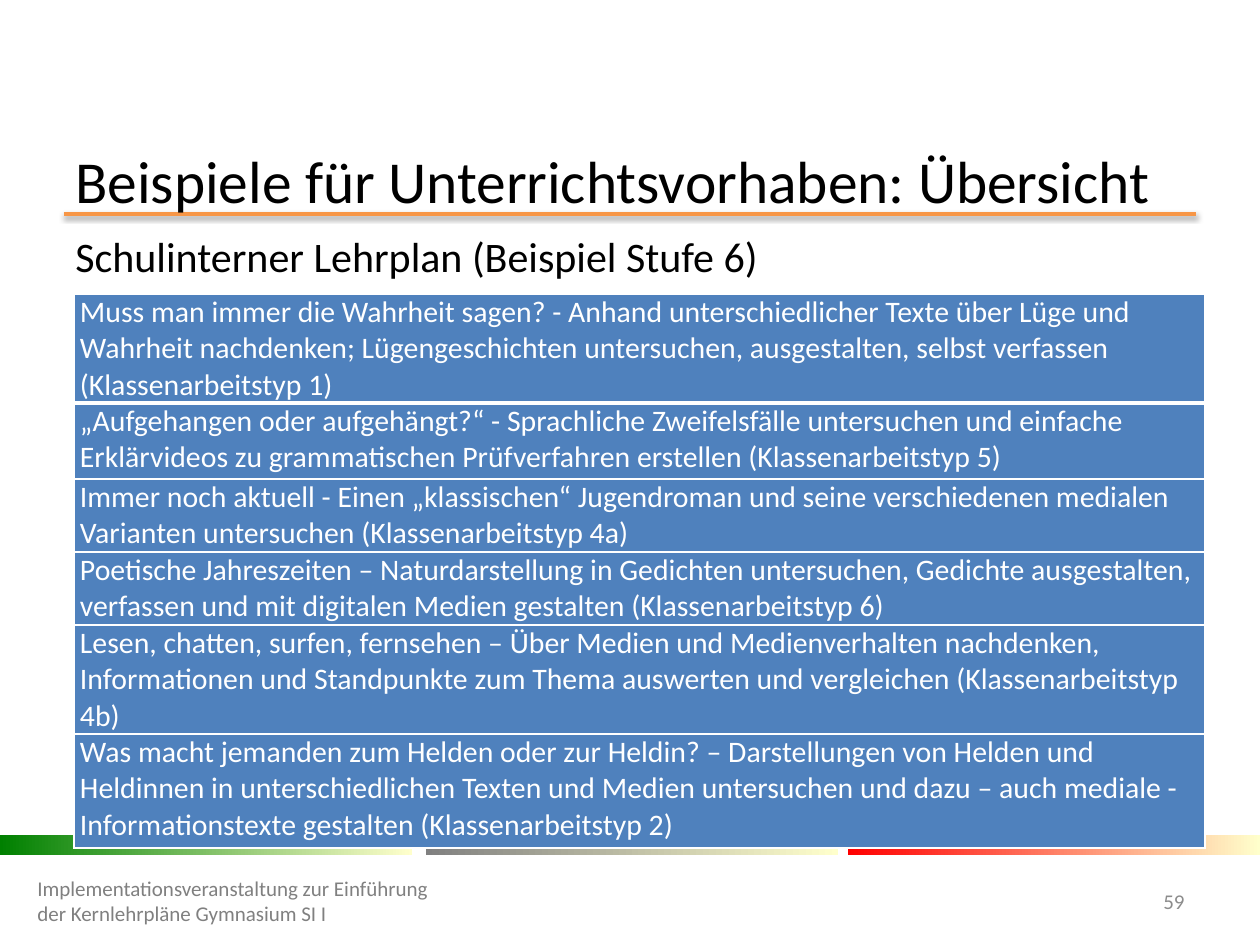
import pptx
import pptx.dml.color
import pptx.enum.shapes
import pptx.enum.text
import pptx.oxml
import pptx.oxml.ns
import pptx.util

COLORS = {
    "white": "FFFFFF", "black": "000000", "orange": "F79646", "blue": "4F81BD",
    "green": "008000", "gray": "808080", "red": "FF0000", "cream": "FFFFCC",
    "number": "8C8C8C",
}
FONT = "Calibri"
NS = pptx.oxml.ns.nsdecls("a")
ANCHOR = pptx.enum.text.MSO_ANCHOR
ALIGN = pptx.enum.text.PP_ALIGN


def px(n):
    return pptx.util.Emu(round(n * 914400 / 126))


def rgb(name):
    return pptx.dml.color.RGBColor.from_string(COLORS[name])


class SlideBuilder:
    def __init__(self, slide):
        self.slide = slide

    def set_text(self, tf, text, size, color, align=ALIGN.LEFT, before=0, after=0):
        tf.text = text
        p = tf.paragraphs[0]
        p.alignment = align
        p.space_before = pptx.util.Pt(before)
        p.space_after = pptx.util.Pt(after)
        for r in p.runs:
            r.font.name = FONT
            r.font.size = pptx.util.Pt(size)
            r.font.color.rgb = rgb(color)

    def text(self, x, y, w, h, text, size, color, anchor=ANCHOR.MIDDLE, fill=None, **style):
        sp = self.slide.shapes.add_textbox(px(x), px(y), px(w), px(h))
        tf = sp.text_frame
        tf.word_wrap = True
        tf.vertical_anchor = anchor
        if fill:
            sp.fill.solid()
            sp.fill.fore_color.rgb = rgb(fill)
        self.set_text(tf, text, size, color, **style)

    def rule(self, x1, x2, y, color, width):
        line = self.slide.shapes.add_connector(
            pptx.enum.shapes.MSO_CONNECTOR.STRAIGHT, px(x1), px(y), px(x2), px(y))
        line.line.color.rgb = rgb(color)
        line.line.width = pptx.util.Pt(width)
        line._element.spPr.append(pptx.oxml.parse_xml(
            f'<a:effectLst {NS}><a:outerShdw blurRad="40000" dist="20000" dir="5400000" rotWithShape="0">'
            f'<a:srgbClr val="{COLORS["black"]}"><a:alpha val="38000"/></a:srgbClr>'
            '</a:outerShdw></a:effectLst>'))

    def gradient_bar(self, x, y, w, h, start, end):
        sp = self.slide.shapes.add_shape(
            pptx.enum.shapes.MSO_SHAPE.RECTANGLE, px(x), px(y), px(w), px(h))
        sp.shadow.inherit = False
        sp.line.fill.background()
        sp.fill.gradient()
        sp.fill.gradient_angle = 0
        for stop, color in zip(sp.fill.gradient_stops, (start, end)):
            stop.color.rgb = rgb(color)

    def borders(self, cell, color, **widths):
        tcPr = cell._tc.get_or_add_tcPr()
        for i, side in enumerate("LRTB"):
            width = pptx.util.Pt(widths.get(side, 1))
            tcPr.insert(i, pptx.oxml.parse_xml(
                f'<a:ln{side} {NS} w="{width}"><a:solidFill>'
                f'<a:srgbClr val="{COLORS[color]}"/></a:solidFill></a:ln{side}>'))

    def table(self, x, y, w, rows):
        heights = [h for h, _ in rows]
        frame = self.slide.shapes.add_table(len(rows), 1, px(x), px(y), px(w), px(sum(heights)))
        table = frame.table
        table.columns[0].width = px(w)
        for i, (height, text) in enumerate(rows):
            table.rows[i].height = px(height)
            cell = table.cell(i, 0)
            cell.margin_left = cell.margin_right = px(6)
            cell.margin_top = cell.margin_bottom = 0
            cell.fill.solid()
            cell.fill.fore_color.rgb = rgb("blue")
            self.borders(cell, "white", B=3 if i == 0 else 1, T=3 if i == 1 else 1)
            self.set_text(cell.text_frame, text, 17, "white", before=1, after=2)


BARS = [(0, "green", "cream"), (426, "gray", "cream"), (848, "red", "cream")]
PROJECTS = [
    (109, "Muss man immer die Wahrheit sagen? - Anhand unterschiedlicher Texte über Lüge und "
          "Wahrheit nachdenken; Lügengeschichten untersuchen, ausgestalten, selbst verfassen "
          "(Klassenarbeitstyp 1)"),
    (76, "„Aufgehangen oder aufgehängt?“ - Sprachliche Zweifelsfälle untersuchen und einfache "
         "Erklärvideos zu grammatischen Prüfverfahren erstellen (Klassenarbeitstyp 5)"),
    (73, "Immer noch aktuell - Einen „klassischen“ Jugendroman und seine verschiedenen medialen "
         "Varianten untersuchen (Klassenarbeitstyp 4a)"),
    (73, "Poetische Jahreszeiten – Naturdarstellung in Gedichten untersuchen, Gedichte "
         "ausgestalten, verfassen und mit digitalen Medien gestalten (Klassenarbeitstyp 6)"),
    (109, "Lesen, chatten, surfen, fernsehen – Über Medien und Medienverhalten nachdenken, "
          "Informationen und Standpunkte zum Thema auswerten und vergleichen "
          "(Klassenarbeitstyp 4b)"),
    (114, "Was macht jemanden zum Helden oder zur Heldin? – Darstellungen von Helden und "
          "Heldinnen in unterschiedlichen Texten und Medien untersuchen und dazu – auch "
          "mediale - Informationstexte gestalten (Klassenarbeitstyp 2)"),
]


def main():
    prs = pptx.Presentation()
    prs.slide_width, prs.slide_height = px(1260), px(945)
    s = SlideBuilder(prs.slides.add_slide(prs.slide_layouts[6]))

    s.rule(64, 1196, 214, "orange", 2)
    for x, start, end in BARS:
        s.gradient_bar(x, 835, 412, 20, start, end)
    s.text(63, 155, 1134, 49, "Beispiele für Unterrichtsvorhaben: Übersicht", 34, "black")
    s.text(63, 224, 1134, 580, "Schulinterner Lehrplan (Beispiel Stufe 6)", 24, "black",
           anchor=ANCHOR.TOP, fill="white", after=6)
    s.text(25, 876, 417, 50, "Implementationsveranstaltung zur Einführung "
           "der Kernlehrpläne Gymnasium SI I", 12, "gray")
    s.text(1116, 876, 81, 50, "59", 12, "number", align=ALIGN.RIGHT)
    s.table(74, 294, 1131, PROJECTS)

    prs.save("out.pptx")


if __name__ == "__main__":
    main()
